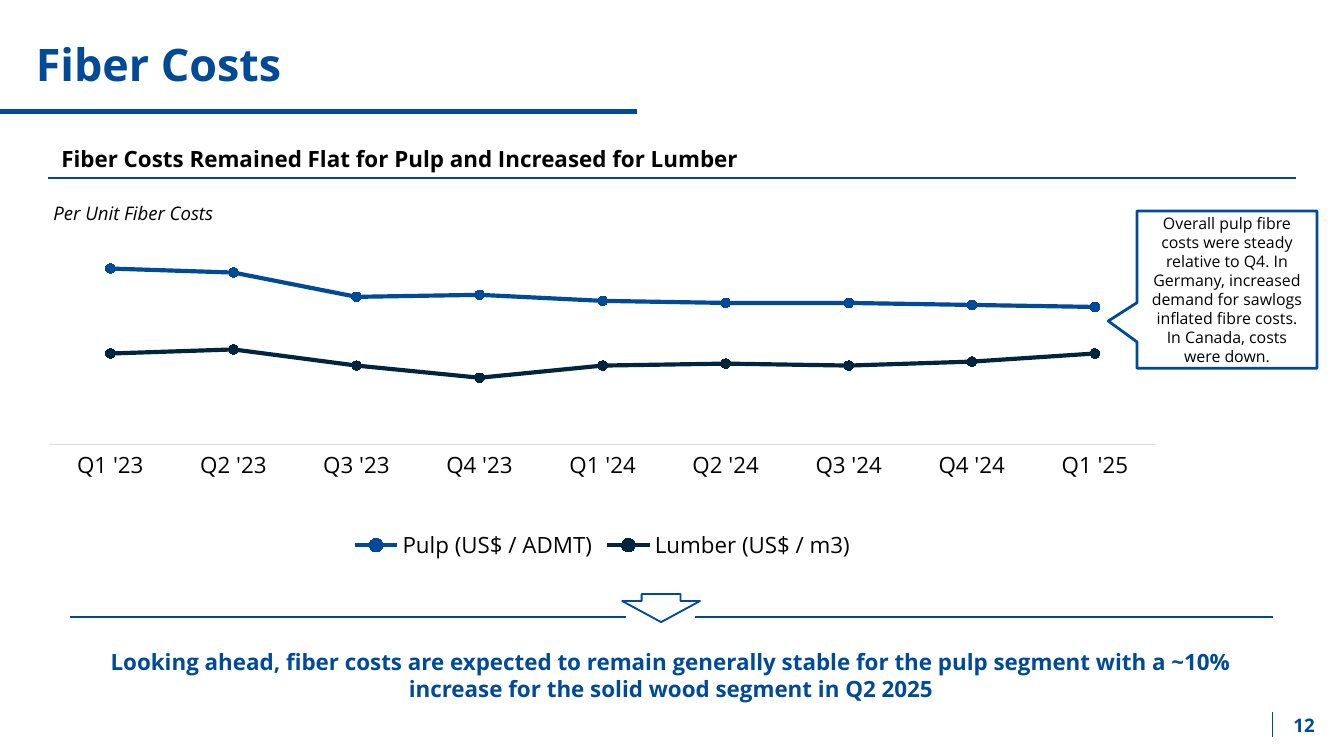
"""Build the fiber costs slide with its line chart, callout and outlook."""
import dataclasses

import pptx
import pptx.chart.data
import pptx.dml.color
import pptx.enum.chart
import pptx.enum.shapes
import pptx.enum.text
import pptx.oxml
import pptx.oxml.ns
import pptx.util

Cm = pptx.util.Cm
Pt = pptx.util.Pt
ALIGN = pptx.enum.text.PP_ALIGN
ANCHOR = pptx.enum.text.MSO_ANCHOR
SHAPE = pptx.enum.shapes.MSO_SHAPE
NS = pptx.oxml.ns.nsdecls


@dataclasses.dataclass(frozen=True)
class Theme:
    """Colours, font and type sizes of the slide."""
    font: str = "Open Sans"
    blue: str = "004A97"
    rule: str = "004894"
    navy: str = "00253D"
    black: str = "000000"
    white: str = "FFFFFF"
    grey: str = "DDDDDE"
    title: float = 24
    body: float = 12
    small: float = 10
    note: float = 8.5


def rgb(color):
    """Return the colour object for a hex string."""
    return pptx.dml.color.RGBColor.from_string(color)


def style_font(font, name, size, color, bold=False, italic=False):
    """Set the typeface, size, colour and weight of a font."""
    font.name, font.size = name, Pt(size)
    font.bold, font.italic = bold, italic
    font.color.rgb = rgb(color)


def write(tf, text, align=ALIGN.LEFT, anchor=ANCHOR.TOP, inset=0.13, **font):
    """Write one wrapped paragraph into a text frame."""
    tf.word_wrap = True
    tf.vertical_anchor = anchor
    tf.margin_left = tf.margin_right = Cm(0.25)
    tf.margin_top = tf.margin_bottom = Cm(inset)
    p = tf.paragraphs[0]
    p.alignment = align
    r = p.add_run()
    r.text = text
    style_font(r.font, **font)


class SlideBuilder:
    """Hold the theme and the current slide, and add elements to it."""

    def __init__(self, s, theme):
        """Keep the slide and the theme."""
        self.s, self.theme = s, theme

    def text(self, box, text, size, color, **fmt):
        """Add a text box."""
        sp = self.s.shapes.add_textbox(*map(Cm, box))
        write(sp.text_frame, text, name=self.theme.font, size=size, color=color, **fmt)

    def line(self, x1, y1, x2, y2, color, width):
        """Add a straight line without a shadow."""
        cx = self.s.shapes.add_connector(
            pptx.enum.shapes.MSO_CONNECTOR.STRAIGHT, *map(Cm, (x1, y1, x2, y2)))
        cx.line.color.rgb = rgb(color)
        cx.line.width = Pt(width)
        cx._element.spPr.append(pptx.oxml.parse_xml(f"<a:effectLst {NS('a')}/>"))

    def shape(self, kind, box, adjustments, width):
        """Add a white shape with a blue outline."""
        sp = self.s.shapes.add_shape(kind, *map(Cm, box))
        sp.shadow.inherit = False
        for i, value in enumerate(adjustments):
            sp.adjustments[i] = value
        sp.fill.solid()
        sp.fill.fore_color.rgb = rgb(self.theme.white)
        sp.line.color.rgb = rgb(self.theme.blue)
        sp.line.width = Pt(width)
        return sp

    def callout(self, box, adjustments, text):
        """Add a speech callout with centred text."""
        t = self.theme
        sp = self.shape(SHAPE.RECTANGULAR_CALLOUT, box, adjustments, 1.5)
        write(sp.text_frame, text, align=ALIGN.CENTER, anchor=ANCHOR.MIDDLE,
              name=t.font, size=t.note, color=t.black)

    def line_chart(self, box, categories, series):
        """Add a marked line chart from (name, values, colour) series."""
        t = self.theme
        data = pptx.chart.data.CategoryChartData()
        data.categories = categories
        for name, values, _ in series:
            data.add_series(name, values)
        chart = self.s.shapes.add_chart(
            pptx.enum.chart.XL_CHART_TYPE.LINE_MARKERS, *map(Cm, box), data).chart
        style_font(chart.font, t.font, t.body, t.black)
        chart.has_title = False
        chart.has_legend = True
        chart.legend.position = pptx.enum.chart.XL_LEGEND_POSITION.BOTTOM
        chart.legend.include_in_layout = False
        style_font(chart.legend.font, t.font, t.body, t.black)

        axis = chart.value_axis
        axis.minimum_scale, axis.maximum_scale, axis.major_unit = 13, 121, 27
        axis.has_major_gridlines = False
        axis.visible = False
        axis = chart.category_axis
        axis.major_tick_mark = pptx.enum.chart.XL_TICK_MARK.NONE
        axis.format.line.color.rgb = rgb(t.grey)
        axis.format.line.width = Pt(0.75)
        style_font(axis.tick_labels.font, t.font, t.body, t.black)

        plot = chart.plots[0]
        plot.vary_by_categories = False
        for ser, (_, _, color) in zip(plot.series, series):
            ser.smooth = False
            ser.format.line.color.rgb = rgb(color)
            ser.format.line.width = Pt(2.25)
            ser.marker.style = pptx.enum.chart.XL_MARKER_STYLE.CIRCLE
            ser.marker.size = 5
            ser.marker.format.fill.solid()
            ser.marker.format.fill.fore_color.rgb = rgb(color)
            ser.marker.format.line.color.rgb = rgb(color)
        self.place_plot(chart, x=0, y=0.16, w=1, h=0.54)

    def place_plot(self, chart, **place):
        """Fix the inner plot area at fractions of the chart."""
        modes = "".join(f'<c:{k}Mode val="edge"/>' for k in "xy")
        sizes = "".join(f'<c:{k} val="{v}"/>' for k, v in place.items())
        area = chart._chartSpace.chart.plotArea
        for old in area.findall(pptx.oxml.ns.qn("c:layout")):
            area.remove(old)
        area.insert(0, pptx.oxml.parse_xml(
            f'<c:layout {NS("c")}><c:manualLayout><c:layoutTarget val="inner"/>'
            f"{modes}{sizes}</c:manualLayout></c:layout>"))


def main():
    """Build and save the slide."""
    prs = pptx.Presentation()
    prs.slide_width, prs.slide_height = Cm(25.4), Cm(14.29)
    t = Theme()
    b = SlideBuilder(prs.slides.add_slide(prs.slide_layouts[6]), t)

    b.line(24.05, 13.46, 24.05, 13.94, t.blue, 0.75)
    b.line(0, 2.11, 12.04, 2.11, t.blue, 3)
    b.text((0.43, 0.36, 23.24, 1.6), "Fiber Costs", t.title, t.blue,
           bold=True, anchor=ANCHOR.BOTTOM, inset=0.25)
    b.text((24.05, 13.36, 1.19, 0.71), "12", t.small, t.blue, bold=True,
           align=ALIGN.CENTER, anchor=ANCHOR.MIDDLE, inset=0.25)

    quarters = [f"Q{i % 4 + 1} '{23 + i // 4}" for i in range(9)]
    b.line_chart((0.91, 3.05, 20.96, 7.65), quarters, [
        ("Pulp (US$ / ADMT)", (100, 98, 86, 87, 84, 83, 83, 82, 81), t.blue),
        ("Lumber (US$ / m3)", (58, 60, 52, 46, 52, 53, 52, 54, 58), t.navy),
    ])
    b.line(0.91, 3.37, 24.49, 3.37, t.rule, 1)
    b.text((0.91, 2.62, 23.55, 0.76),
           "Fiber Costs Remained Flat for Pulp and Increased for Lumber",
           t.body, t.black, bold=True)
    b.text((0.76, 3.68, 8.59, 0.69), "Per Unit Fiber Costs",
           t.small, t.black, italic=True)

    b.shape(SHAPE.DOWN_ARROW, (11.76, 11.23, 1.47, 0.53), (0.5, 0.75), 1)
    b.text((1.32, 12.12, 22.73, 1.27),
           "Looking ahead, fiber costs are expected to remain generally stable for "
           "the pulp segment with a ~10% increase for the solid wood segment in Q2 2025",
           t.body, t.blue, bold=True, align=ALIGN.CENTER)
    for left, right in ((1.32, 11.84), (13.13, 24.05)):
        b.line(left, 11.66, right, 11.66, t.rule, 1)
    b.callout((21.49, 3.99, 3.4, 2.97), (-0.66, 0.2),
              "Overall pulp fibre costs were steady relative to Q4. In Germany, "
              "increased demand for sawlogs inflated fibre costs. In Canada, "
              "costs were down.")
    prs.save("out.pptx")


if __name__ == "__main__":
    main()
